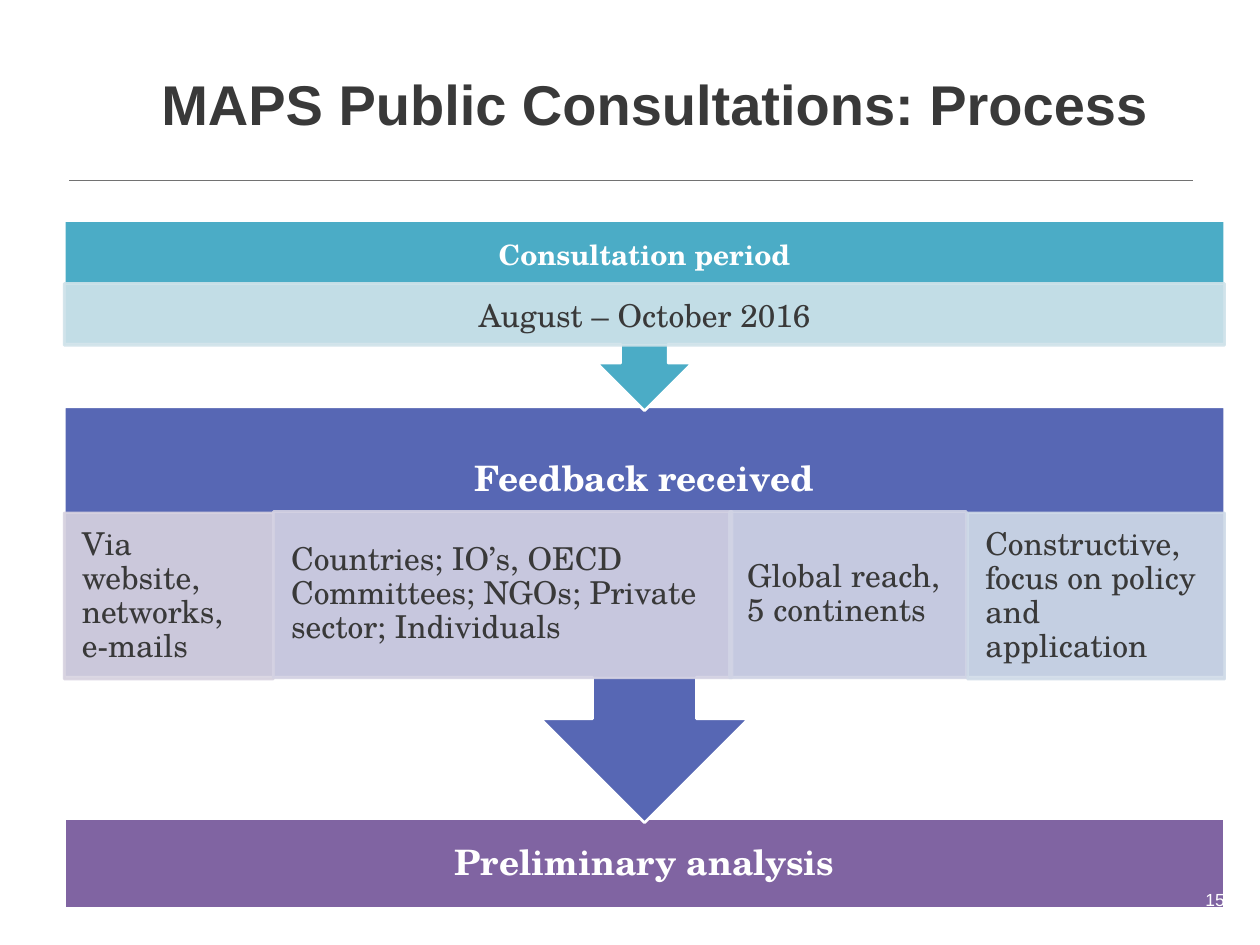
from dataclasses import dataclass

from lxml import etree
from pptx import Presentation
from pptx.dml.color import RGBColor
from pptx.enum.shapes import MSO_CONNECTOR, MSO_SHAPE
from pptx.enum.text import MSO_ANCHOR, MSO_AUTO_SIZE, PP_ALIGN
from pptx.oxml.ns import qn
from pptx.util import Pt

SCALE = 9144  # EMU per px, 100 px to the inch
LEFT, WIDTH = 51, 921
SERIF, SANS = "TeX Gyre Schola", "Arial"
PLAIN, CALL = MSO_SHAPE.RECTANGLE, MSO_SHAPE.DOWN_ARROW_CALLOUT
MID, TOP = MSO_ANCHOR.MIDDLE, MSO_ANCHOR.TOP
START, CENTER, END = PP_ALIGN.LEFT, PP_ALIGN.CENTER, PP_ALIGN.RIGHT

WHITE = RGBColor(0xFF, 0xFF, 0xFF)
DARK = RGBColor(0x39, 0x39, 0x39)
GREY = RGBColor(0x72, 0x72, 0x72)
TEAL = RGBColor(0x4B, 0xAC, 0xC6)
BLUE = RGBColor(0x57, 0x67, 0xB4)
PURPLE = RGBColor(0x80, 0x64, 0xA2)
ICE = RGBColor(0xD0, 0xE3, 0xEA)
MAUVE = RGBColor(0xD8, 0xD3, 0xE0)
LILAC = RGBColor(0xD4, 0xD2, 0xE3)
HAZE = RGBColor(0xD1, 0xD4, 0xE5)
MIST = RGBColor(0xD0, 0xDB, 0xE8)


@dataclass
class Stage:
    text: str
    top: int
    height: int
    head: int  # height of the heading area
    kind: int
    fill: RGBColor
    size: int
    inset: int
    space: float


@dataclass
class Cell:
    text: str
    left: int
    top: int
    width: int
    height: int
    fill: RGBColor
    align: int
    space: float


STAGES = [
    Stage("Preliminary analysis", 650, 71, 71, PLAIN, PURPLE, 20, 16, 0.9),
    Stage("Feedback received", 323, 330, 116, CALL, BLUE, 20, 16, 0.9),
    Stage("Consultation period", 175, 151, 53, CALL, TEAL, 16, 12, 1.0),
]
CELLS = [
    Cell("Via website, networks, e-mails", LEFT, 407, 166, 132, MAUVE, START, 0.9),
    Cell("Countries; IO’s, OECD Committees; NGOs; Private sector; Individuals",
         217, 406, 364, 132, LILAC, START, 0.9),
    Cell("Global reach, 5 continents", 579, 406, 188, 132, HAZE, START, 0.9),
    Cell("Constructive, focus on policy and application",
         768, 407, 204, 132, MIST, START, 0.9),
    Cell("August – October 2016", LEFT, 225, WIDTH, 49, ICE, CENTER, 1.0),
]


def px(*vals: int) -> list[int]:
    return [val * SCALE for val in vals]


def write(shape, text: str, size: int, color: RGBColor, font: str = SERIF,
          bold: bool = False, align: int = CENTER, anchor: int = MID,
          pad: tuple[int, int] = (10, 5), space: float = 1.0,
          wrap: bool = True) -> None:
    frame = shape.text_frame
    frame.word_wrap, frame.auto_size = wrap, MSO_AUTO_SIZE.NONE
    frame.vertical_anchor = anchor
    frame.margin_left = frame.margin_right = pad[0] * SCALE
    frame.margin_top = frame.margin_bottom = pad[1] * SCALE
    para = frame.paragraphs[0]
    para.alignment, para.line_spacing = align, space
    run = para.add_run()
    run.text = text
    run.font.name, run.font.size, run.font.bold = font, Pt(size), bold
    run.font.color.rgb = color


def block(slide, kind: int, box: list[int], fill: RGBColor, line: RGBColor):
    shape = slide.shapes.add_shape(kind, *box)
    shape.shadow.inherit = False
    shape.fill.solid()
    shape.fill.fore_color.rgb = fill
    shape.line.color.rgb = line
    shape.line.width = Pt(1.5)
    return shape


def draw_stage(slide, stage: Stage) -> None:
    block(slide, stage.kind, px(LEFT, stage.top, WIDTH, stage.height),
          stage.fill, WHITE)
    label = slide.shapes.add_textbox(*px(LEFT, stage.top, WIDTH, stage.head))
    write(label, stage.text, stage.size, WHITE, bold=True,
          pad=(stage.inset, stage.inset), space=stage.space)


def draw_cell(slide, cell: Cell) -> None:
    box = px(cell.left, cell.top, cell.width, cell.height)
    shape = block(slide, PLAIN, box, cell.fill, cell.fill)
    # Fill and outline are 90 % opaque
    for tint in shape._element.spPr.iter(qn("a:srgbClr")):
        etree.SubElement(tint, qn("a:alpha")).set("val", "90000")
    write(shape, cell.text, 18, DARK, align=cell.align, pad=(14, 3),
          space=cell.space)


def main() -> None:
    deck = Presentation()
    deck.slide_width, deck.slide_height = px(1000, 750)
    slide = deck.slides.add_slide(deck.slide_layouts[5])

    # Title and rule
    title = slide.shapes.title
    title.left, title.top, title.width, title.height = px(118, 26, 811, 112)
    write(title, "MAPS Public Consultations: Process", 32, DARK, SANS,
          bold=True, align=START)
    rule = slide.shapes.add_connector(MSO_CONNECTOR.STRAIGHT,
                                      *px(55, 143, 947, 143))
    rule.line.color.rgb, rule.line.width = GREY, Pt(0.5)
    etree.SubElement(rule._element.spPr, qn("a:effectLst"))

    # Process, from the last stage up so that arrows overlap the next one
    for stage in STAGES:
        draw_stage(slide, stage)
    for cell in CELLS:
        draw_cell(slide, cell)

    # Page number
    page = slide.shapes.add_textbox(*px(945, 701, 37, 27))
    write(page, "15", 10, WHITE, SANS, align=END, anchor=TOP, wrap=False)

    deck.save("out.pptx")


if __name__ == "__main__":
    main()
